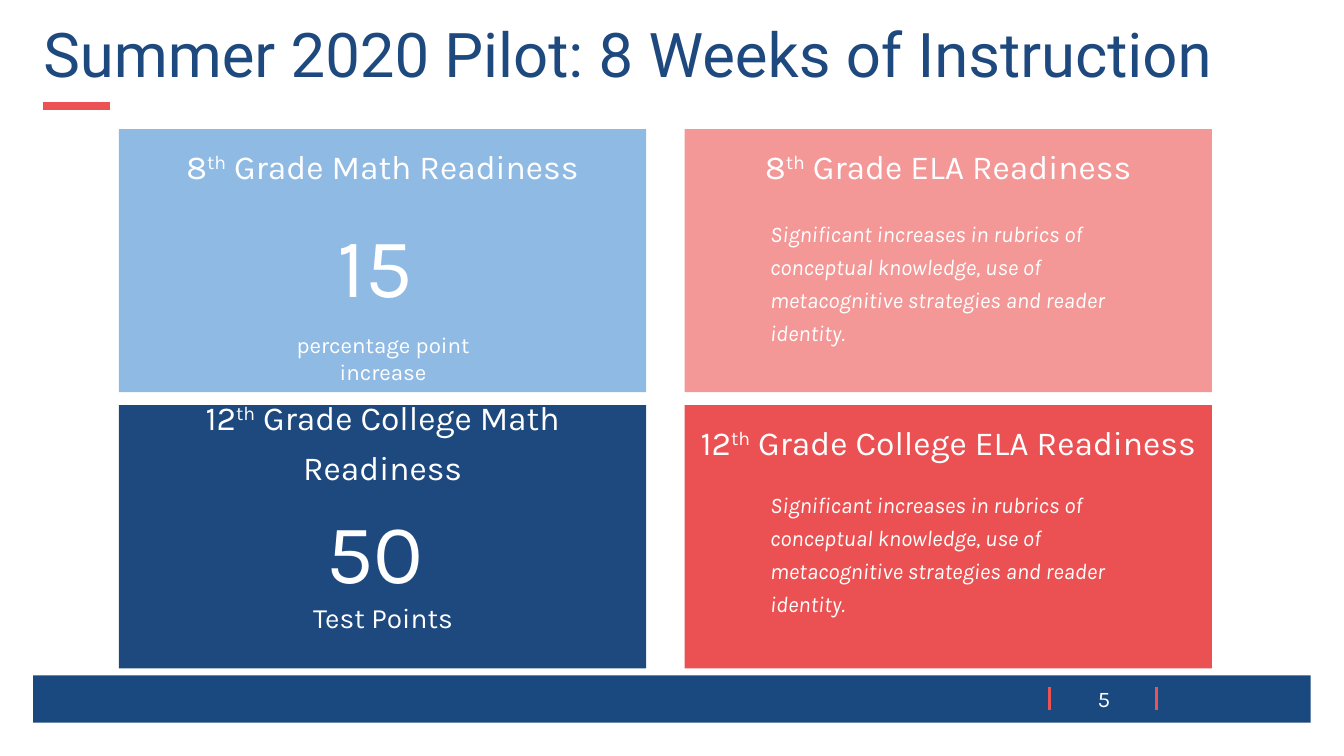
from pptx import Presentation
from pptx.dml.color import RGBColor
from pptx.enum.shapes import MSO_CONNECTOR, MSO_SHAPE
from pptx.enum.text import MSO_ANCHOR, PP_ALIGN
from pptx.oxml.xmlchemy import OxmlElement
from pptx.util import Inches, Pt

NAVY = RGBColor(0x1E, 0x49, 0x7F)
FOOTER_BLUE = RGBColor(0x1A, 0x49, 0x7F)
LIGHT_BLUE = RGBColor(0x8F, 0xBA, 0xE4)
PINK = RGBColor(0xF3, 0x97, 0x97)
RED = RGBColor(0xEB, 0x51, 0x52)
ACCENT_RED = RGBColor(0xEC, 0x51, 0x53)
WHITE = RGBColor(0xFF, 0xFF, 0xFF)

TITLE = "Summer 2020 Pilot: 8 Weeks of Instruction"
PAGE_NUMBER = "5"
ELA_RESULT = (
    "Significant increases in rubrics of conceptual knowledge, use of "
    "metacognitive strategies and reader identity."
)
CARDS = [
    ("8", " Grade Math Readiness", LIGHT_BLUE),
    ("8", " Grade ELA Readiness", PINK),
    ("12", " Grade College Math Readiness", NAVY),
    ("12", " Grade College ELA Readiness", RED),
]
MATH_RESULTS = [
    (2.07, 1.82, "15", "percentage point increase", 16, 6),
    (4.91, 1.45, "50", "Test Points", 20, 0),
]
ELA_TOPS = [2.07, 4.76]

CARD_LEFT, CARD_TOP = 1.18, 1.28
CARD_WIDTH, CARD_HEIGHT = 5.23, 2.61
COLUMN_STEP, ROW_STEP = 5.61, 2.74
HEADING_BOTTOM_INSET = 1.97


def write(para, text, size=16, font="Karla", color=WHITE, italic=False,
          align=PP_ALIGN.CENTER, spacing=1.0, before=0, after=0, raised=False):
    para.alignment = align
    para.line_spacing = spacing
    para.space_before = Pt(before)
    para.space_after = Pt(after)
    span = para.add_run()
    span.text = text
    span.font.size = Pt(size)
    span.font.name = font
    span.font.color.rgb = color
    span.font.italic = italic
    if raised:
        span.font._element.set("baseline", "30000")


def add_rectangle(page, left, top, width, height, color):
    box = page.shapes.add_shape(MSO_SHAPE.RECTANGLE, Inches(left), Inches(top),
                                Inches(width), Inches(height))
    box.shadow.inherit = False
    box.fill.solid()
    box.fill.fore_color.rgb = color
    box.line.fill.background()
    return box


def add_line(page, start, end, width):
    line = page.shapes.add_connector(MSO_CONNECTOR.STRAIGHT,
                                     *map(Inches, start + end))
    line.line.color.rgb = ACCENT_RED
    line.line.width = Pt(width)
    line._element.spPr.append(OxmlElement("a:effectLst"))


def add_text_frame(page, left, top, width, height, anchor=MSO_ANCHOR.TOP):
    box = page.shapes.add_textbox(Inches(left), Inches(top),
                                  Inches(width), Inches(height))
    frame = box.text_frame
    frame.word_wrap = True
    frame.vertical_anchor = anchor
    return frame


def add_title(page):
    title = page.shapes.title
    title.left, title.top = Inches(0.33), Inches(0.18)
    title.width, title.height = Inches(12.67), Inches(0.77)
    title.text_frame.vertical_anchor = MSO_ANCHOR.BOTTOM
    write(title.text_frame.paragraphs[0], TITLE, size=44, font="Roboto",
          color=NAVY, align=PP_ALIGN.LEFT, spacing=0.9)
    add_line(page, (0.43, 1.05), (1.09, 1.05), 6)


def add_footer(page):
    add_rectangle(page, 0.33, 6.7, 12.67, 0.47, FOOTER_BLUE)
    for x in (10.41, 11.47):
        add_line(page, (x, 6.82), (x, 7.04), 2.25)
    frame = add_text_frame(page, 10.63, 6.75, 0.64, 0.37, MSO_ANCHOR.MIDDLE)
    write(frame.paragraphs[0], PAGE_NUMBER)


def add_cards(page):
    for index, (grade, subject, color) in enumerate(CARDS):
        row, column = divmod(index, 2)
        card = add_rectangle(page, CARD_LEFT + column * COLUMN_STEP,
                             CARD_TOP + row * ROW_STEP,
                             CARD_WIDTH, CARD_HEIGHT, color)
        frame = card.text_frame
        frame.word_wrap = True
        frame.vertical_anchor = MSO_ANCHOR.MIDDLE
        frame.margin_top = 0
        frame.margin_bottom = Inches(HEADING_BOTTOM_INSET)
        para = frame.paragraphs[0]
        write(para, grade, size=24, spacing=1.23)
        write(para, "th", size=24, spacing=1.23, raised=True)
        write(para, subject, size=24, spacing=1.23)


def add_results(page):
    for top, height, number, unit, unit_size, gap in MATH_RESULTS:
        frame = add_text_frame(page, 2.68, top, 2.24, height)
        write(frame.paragraphs[0], number, size=60)
        write(frame.paragraphs[0], " ", size=48, after=gap)
        write(frame.add_paragraph(), unit, size=unit_size, before=gap)
    for top in ELA_TOPS:
        frame = add_text_frame(page, 7.54, top, 3.73, 1.89)
        write(frame.paragraphs[0], ELA_RESULT, italic=True,
              align=PP_ALIGN.LEFT, spacing=1.23)


def main():
    deck = Presentation()
    deck.slide_width, deck.slide_height = Inches(13.33), Inches(7.5)
    page = deck.slides.add_slide(deck.slide_layouts[5])
    add_title(page)
    add_footer(page)
    add_cards(page)
    add_results(page)
    deck.save("out.pptx")


if __name__ == "__main__":
    main()
